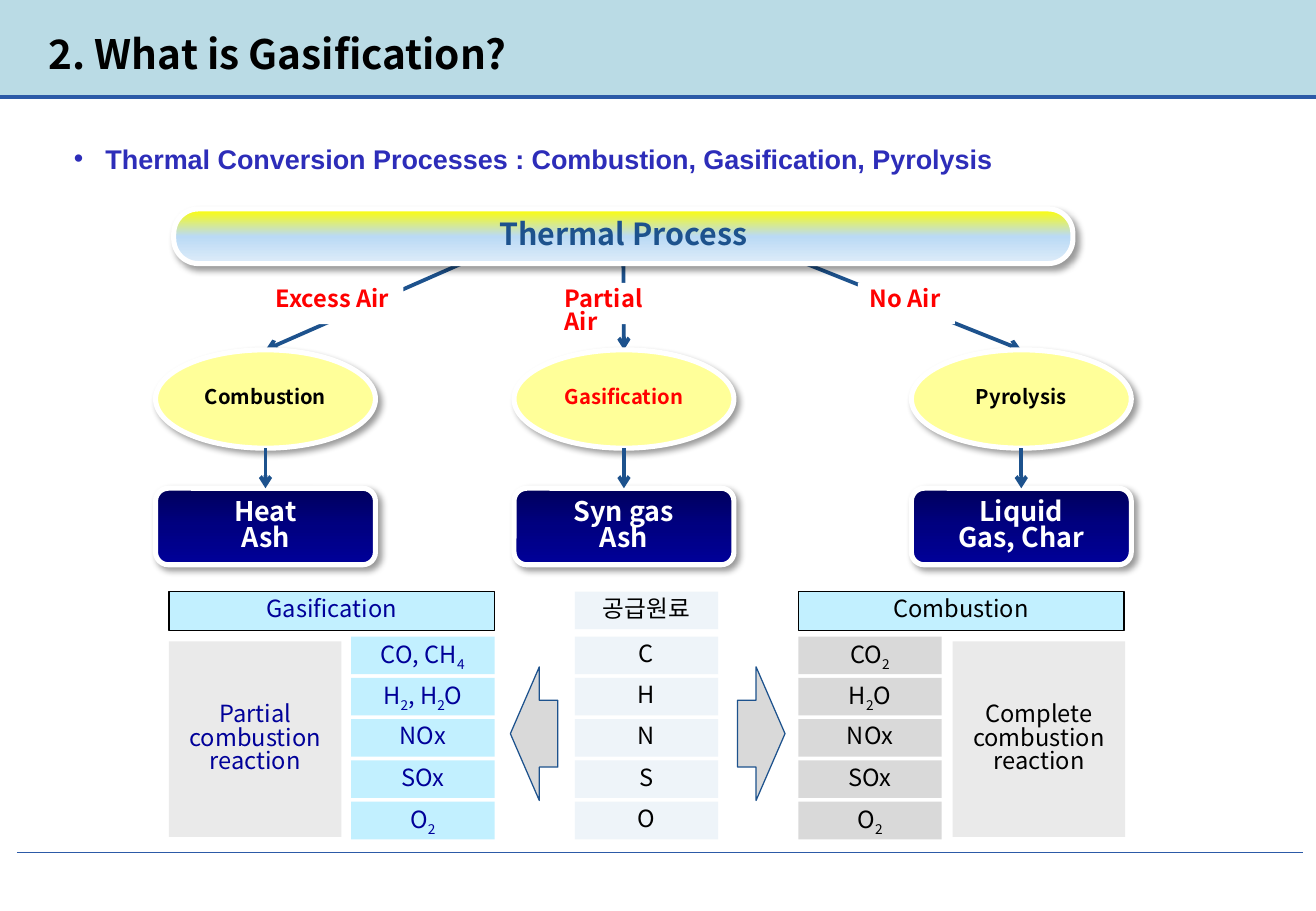
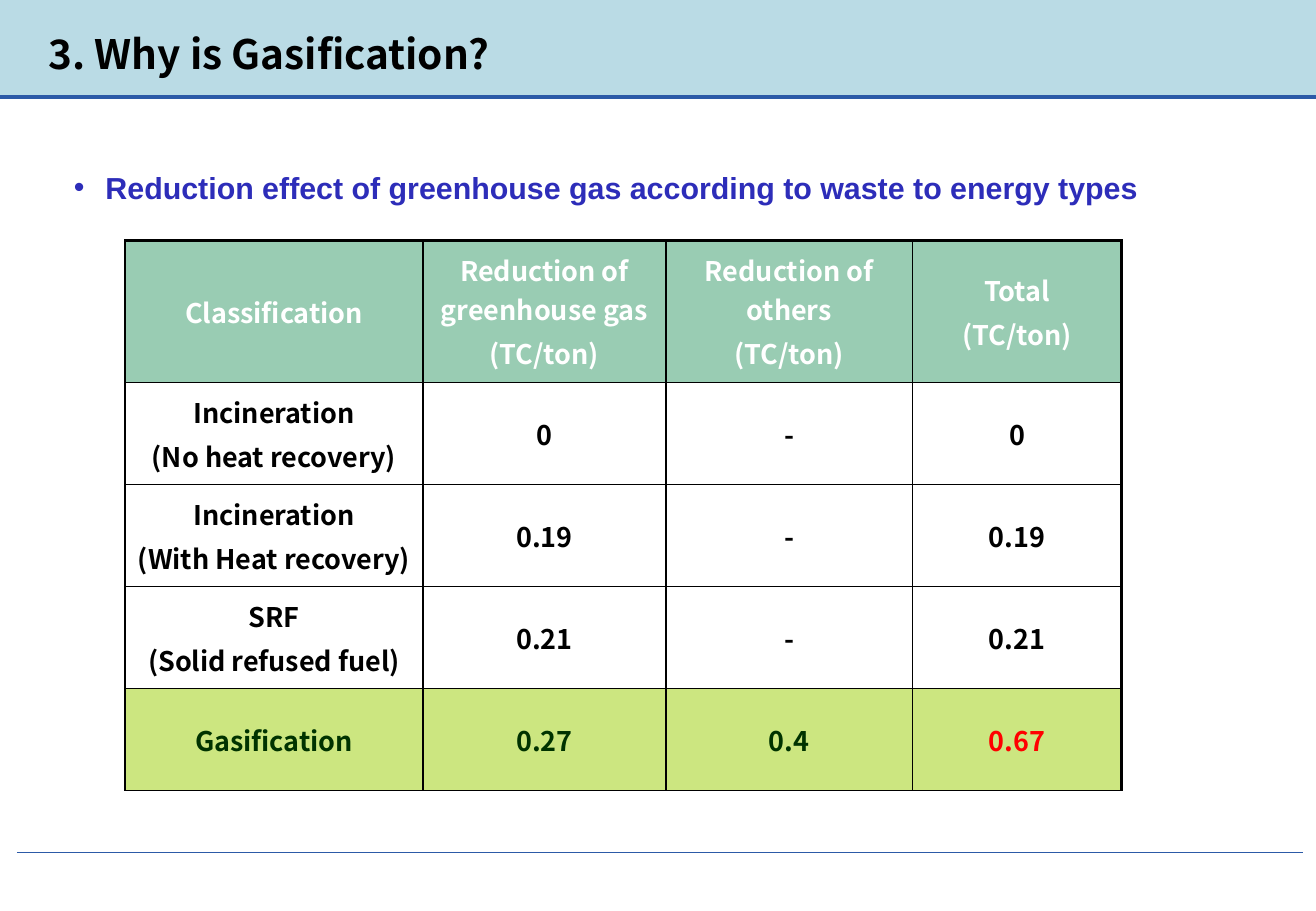
from lxml.etree import SubElement
from pptx import Presentation
from pptx.dml.color import RGBColor
from pptx.enum.shapes import MSO_CONNECTOR, MSO_SHAPE
from pptx.enum.text import MSO_ANCHOR, PP_ALIGN
from pptx.oxml.ns import qn
from pptx.util import Inches, Pt

WIDTH, HEIGHT = 10.83, 7.5
FONT = "Noto Sans CJK KR"
BLACK, WHITE, RED = "000000", "FFFFFF", "FF0000"
BAND, RULE, ARROW, HEADING = "BADBE5", "2C5AA7", "1D528D", "2D2DB9"
NAVY, CYAN, GREY, PALE = "000099", "C2F0FF", "D9D9D9", "EEF4F9"
PANEL, YELLOW, HEADER, LIME, DARK_GREEN = "EAEAEA", "FFFF99", "99CCB3", "CCE680", "003300"
NAVY_FADE = ((0, "00005B"), (50, "000081"), (100, NAVY))
SKY_FADE = ((0, "FFFF00"), (50, "BADAF5"), (100, "DEECF9"))
TIGHT = 0.82


def rgb(color):
    return RGBColor.from_string(color)


def set_font(paragraph, size, color, bold=False, name=FONT):
    font = paragraph.font
    font.size, font.bold, font.name = Pt(size), bold, name
    font.color.rgb = rgb(color)
    SubElement(font._rPr, qn("a:ea")).set("typeface", name)


def write(frame, text, size, color, bold=False, align=PP_ALIGN.CENTER,
          anchor=MSO_ANCHOR.MIDDLE, spacing=TIGHT, gap=0):
    """Write one paragraph per line of text; the character after "_" is a subscript."""
    frame.word_wrap = True
    frame.vertical_anchor = anchor
    for index, line in enumerate(text.split("\n")):
        paragraph = frame.add_paragraph() if index else frame.paragraphs[0]
        paragraph.alignment, paragraph.line_spacing = align, spacing
        if index and gap:
            paragraph.space_before = Pt(gap)
        first, *rest = line.split("_")
        paragraph.add_run().text = first
        for part in rest:
            subscript = paragraph.add_run()
            subscript.text = part[0]
            subscript._r.get_or_add_rPr().set("baseline", "-25000")
            if part[1:]:
                paragraph.add_run().text = part[1:]
        set_font(paragraph, size, color, bold)


def fill_gradient(shape, stops):
    shape.fill.gradient()
    shape.fill.gradient_angle = 270
    stop_list = next(shape._element.spPr.iter(qn("a:gsLst")))
    for stop in list(stop_list):
        stop_list.remove(stop)
    for position, color in stops:
        stop = SubElement(stop_list, qn("a:gs"), pos=str(position * 1000))
        SubElement(stop, qn("a:srgbClr"), val=color)


def add_box(slide, box, fill, kind=MSO_SHAPE.RECTANGLE, line=None, line_width=0.75):
    shape = slide.shapes.add_shape(kind, *map(Inches, box))
    shape.shadow.inherit = False
    if isinstance(fill, tuple):
        fill_gradient(shape, fill)
    else:
        shape.fill.solid()
        shape.fill.fore_color.rgb = rgb(fill)
    if line:
        shape.line.color.rgb = rgb(line)
        shape.line.width = Pt(line_width)
    else:
        shape.line.fill.background()
    return shape


def add_text_box(slide, box, fill, text, color, line=None):
    write(add_box(slide, box, fill, line=line).text_frame, text, 14, color)


def add_raised(slide, box, fill, kind, text, size, color):
    """Add a white-edged shape with a soft shadow and bold text."""
    shape = add_box(slide, box, fill, kind, WHITE, 3)
    effects = shape._element.spPr.find(qn("a:effectLst"))
    shadow = SubElement(effects, qn("a:outerShdw"), blurRad=str(Pt(4)), dist=str(Pt(3)),
                        dir="2700000", algn="tl", rotWithShape="0")
    shadow_color = SubElement(shadow, qn("a:srgbClr"), val=BLACK)
    SubElement(shadow_color, qn("a:alpha"), val="40000")
    frame = shape.text_frame
    frame.margin_top = frame.margin_bottom = 0
    write(frame, text, size, color, bold=True)
    return shape


def add_line(slide, start, end, color, width, arrow=False):
    line = slide.shapes.add_connector(MSO_CONNECTOR.STRAIGHT, *map(Inches, (*start, *end)))
    line.line.color.rgb = rgb(color)
    line.line.width = Pt(width)
    if arrow:
        SubElement(line.line._get_or_add_ln(), qn("a:tailEnd"), type="arrow")
    SubElement(line._element.spPr, qn("a:effectLst"))
    return line


def add_frame(slide):
    """Build the title band and rules, and move them to the slide's layout."""
    parts = (
        add_box(slide, (0, 0, WIDTH, 0.79), BAND),
        add_line(slide, (0.14, 7.02), (10.72, 7.02), RULE, 0.75),
        add_line(slide, (0, 0.8), (WIDTH, 0.8), RULE, 2.25),
    )
    for number, part in enumerate(parts, 101):
        part._element._nvXxPr.cNvPr.id = number
        slide.slide_layout.shapes._spTree.append(part._element)


def add_titled_slide(presentation, title):
    slide = presentation.slides.add_slide(presentation.slide_layouts[5])
    shape = slide.shapes.title
    shape.left, shape.top, shape.width, shape.height = map(Inches, (0.3, 0.19, 7.83, 0.5))
    write(shape.text_frame, title, 24, BLACK, True, PP_ALIGN.LEFT, spacing=1)
    return slide


def add_heading(slide, top, text, size):
    frame = slide.shapes.add_textbox(*map(Inches, (0.51, top, 9.71, 0.47))).text_frame
    frame.word_wrap = True
    frame.margin_right = 0
    paragraph = frame.paragraphs[0]
    paragraph.text = text
    paragraph.line_spacing = 1.5
    properties = paragraph._p.get_or_add_pPr()
    properties.set("marL", str(Inches(0.26)))
    properties.set("indent", str(-Inches(0.26)))
    SubElement(properties, qn("a:buFont"), typeface="Arial")
    SubElement(properties, qn("a:buChar"), char="•")
    set_font(paragraph, size, HEADING, True, "Arial")


def add_branch(slide, box, start, label_left, label_width, label, process, color, product):
    """Add an arrow from the bar, its air label, a process and its product."""
    left, top, width, height = box
    center = left + width / 2
    process_height, product_height = 0.81, 0.63
    product_top = top + height - product_height
    add_line(slide, start, (center, top), ARROW, 2.25, True)
    air = add_box(slide, (label_left, top - 0.55, label_width, 0.34), WHITE)
    write(air.text_frame, label, 14, RED, True, PP_ALIGN.LEFT, MSO_ANCHOR.TOP)
    add_raised(slide, (left, top, width, process_height), YELLOW, MSO_SHAPE.OVAL,
               process, 12, color)
    add_raised(slide, (left, product_top, width, product_height), NAVY_FADE,
               MSO_SHAPE.ROUNDED_RECTANGLE, product, 16, WHITE)
    add_line(slide, (center, top + process_height), (center, product_top), ARROW, 2.25, True)


def add_process_tree(slide, box):
    left, top, width, height = box
    bottom = top + height
    branches = (
        (1.28, 3.8, 2.17, 1.15, "Excess Air", "Combustion", BLACK, "Heat\nAsh"),
        (4.23, 5.13, 4.55, 1.14, "Partial Air", "Gasification", RED, "Syn gas\nAsh"),
        (7.5, 6.63, 7.06, 0.8, "No Air", "Pyrolysis", BLACK, "Liquid\nGas, Char"),
    )
    for branch_left, start, *details in branches:
        add_branch(slide, (branch_left, bottom + 0.71, 1.81, 1.77), (start, bottom), *details)
    bar = add_raised(slide, box, SKY_FADE, MSO_SHAPE.ROUNDED_RECTANGLE,
                     "Thermal Process", 18, ARROW)
    bar.adjustments[0] = 0.45


def add_reactions(slide, box):
    """Compare the feed elements with the products of both reactions."""
    left, top, width, height = box
    cell_width, cell_height, pitch = 1.18, 0.31, 0.34
    rows_top = top + 0.37
    feed_left = left + (width - cell_width) / 2 - 0.59
    feed_left = left + 3.34
    columns = (
        (left + 1.5, CYAN, NAVY, ("CO, CH_4", "H_2, H_2O", "NOx", "SOx", "O_2")),
        (feed_left, PALE, BLACK, "CHNSO"),
        (left + 5.18, GREY, BLACK, ("CO_2", "H_2O", "NOx", "SOx", "O_2")),
    )
    for column_left, fill, color, texts in columns:
        for row, text in enumerate(texts):
            cell = (column_left, rows_top + row * pitch, cell_width, cell_height)
            add_text_box(slide, cell, fill, text, color)
    add_text_box(slide, (feed_left, top, cell_width, cell_height), PALE, "공급원료", BLACK)
    sides = (
        (left, left, "Gasification", "Partial", NAVY, left + 2.81, 180),
        (left + 5.18, left + width - 1.42, "Combustion", "Complete", BLACK, left + 4.68, 0),
    )
    for header_left, panel_left, header, degree, color, arrow_left, rotation in sides:
        add_text_box(slide, (header_left, top, 2.68, 0.32), CYAN, header, color, BLACK)
        panel = (panel_left, top + 0.41, 1.42, height - 0.41)
        add_text_box(slide, panel, PANEL, f"{degree} combustion reaction", color)
        arrow = add_box(slide, (arrow_left, top + 0.62, 0.39, 1.1), GREY,
                        MSO_SHAPE.RIGHT_ARROW, ARROW)
        arrow.adjustments[0], arrow.adjustments[1] = 0.5, 0.61
        arrow.rotation = rotation


def set_borders(cell, widths):
    properties = cell._tc.get_or_add_tcPr()
    for index, (side, width) in enumerate(widths.items()):
        line = SubElement(properties, qn(f"a:ln{side}"), w=str(Pt(width)))
        SubElement(SubElement(line, qn("a:solidFill")), qn("a:srgbClr"), val=BLACK)
        properties.insert(index, line)


def add_reduction_table(slide, left, top):
    rows = (
        ("Classification", "Reduction of greenhouse gas\n(TC/ton)",
         "Reduction of others\n(TC/ton)", "Total\n(TC/ton)"),
        ("Incineration\n(No heat recovery)", "0", "-", "0"),
        ("Incineration\n(With Heat recovery)", "0.19", "-", "0.19"),
        ("SRF\n(Solid refused fuel)", "0.21", "-", "0.21"),
        ("Gasification", "0.27", "0.4", "0.67"),
    )
    styles = ((HEADER, WHITE), *[(WHITE, BLACK)] * 3, (LIME, DARK_GREEN))
    widths, heights = (2.45, 2, 2.03, 1.72), (1.17, *[0.84] * 4)
    box = map(Inches, (left, top, sum(widths), sum(heights)))
    table = slide.shapes.add_table(len(rows), len(widths), *box).table
    table.first_row = table.horz_banding = False
    for column, width in zip(table.columns, widths):
        column.width = Inches(width)
    for r, (texts, (fill, color), height) in enumerate(zip(rows, styles, heights)):
        table.rows[r].height = Inches(height)
        for c, text in enumerate(texts):
            cell = table.cell(r, c)
            cell.fill.solid()
            cell.fill.fore_color.rgb = rgb(fill)
            cell.vertical_anchor = MSO_ANCHOR.MIDDLE
            write(cell.text_frame, text, 16, RED if text == "0.67" else color, True,
                  spacing=1, gap=3.2)
            set_borders(cell, {"L": 1, "R": 1.5 if c == len(widths) - 1 else 1,
                               "T": 1 if r else 1.5, "B": 1})


def main():
    presentation = Presentation()
    presentation.slide_width, presentation.slide_height = Inches(WIDTH), Inches(HEIGHT)

    slide = add_titled_slide(presentation, "2. What is Gasification?")
    add_frame(slide)
    add_process_tree(slide, (1.43, 1.72, 7.4, 0.45))
    add_reactions(slide, (1.39, 4.87, 7.87, 2.02))
    add_heading(slide, 0.99, "Thermal Conversion Processes : Combustion, Gasification, Pyrolysis", 16)

    slide = add_titled_slide(presentation, "3. Why is Gasification?")
    add_reduction_table(slide, 1.03, 1.98)
    add_heading(slide, 1.19, "Reduction effect of greenhouse gas according to waste to energy types", 18)

    presentation.save("out.pptx")


if __name__ == "__main__":
    main()
